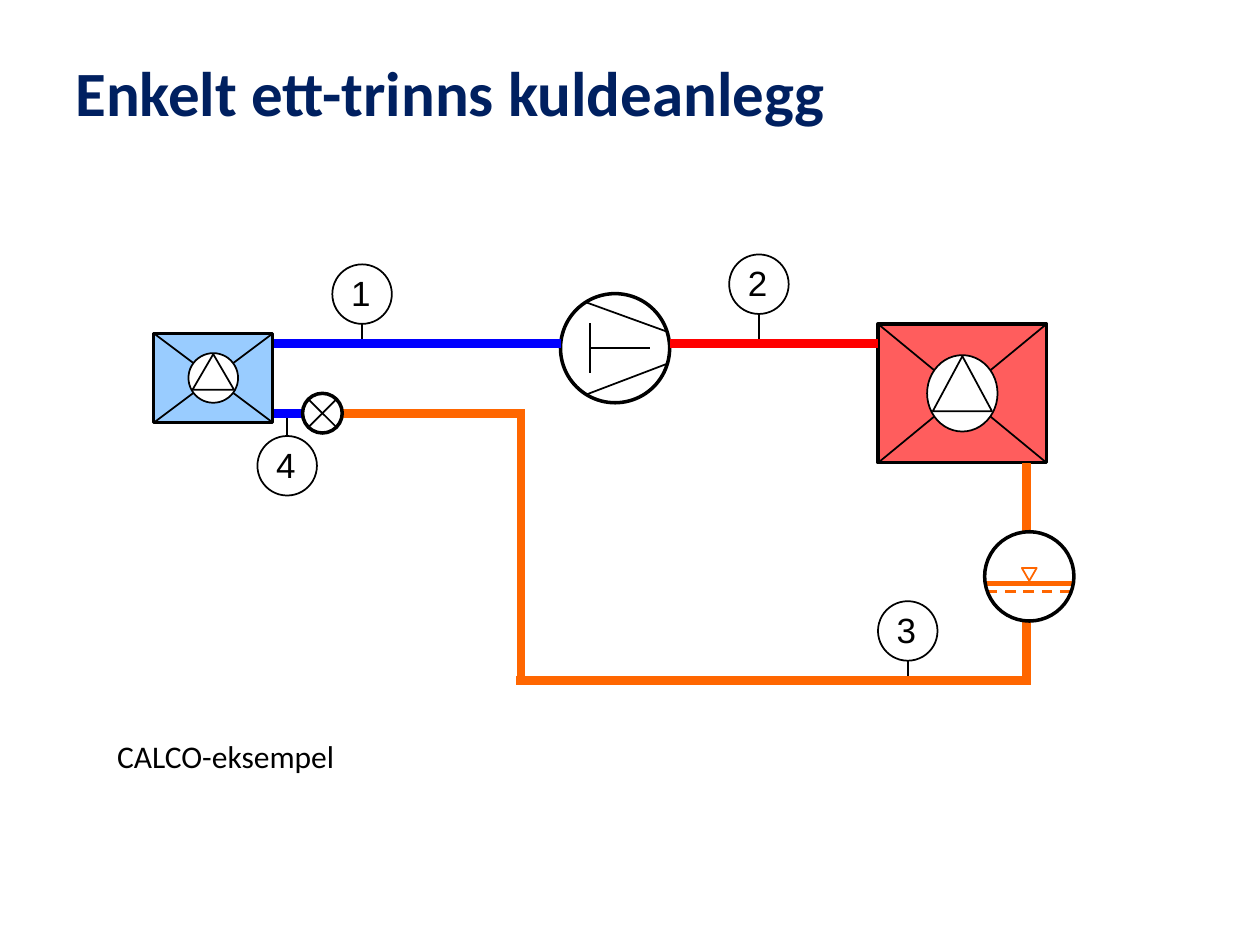
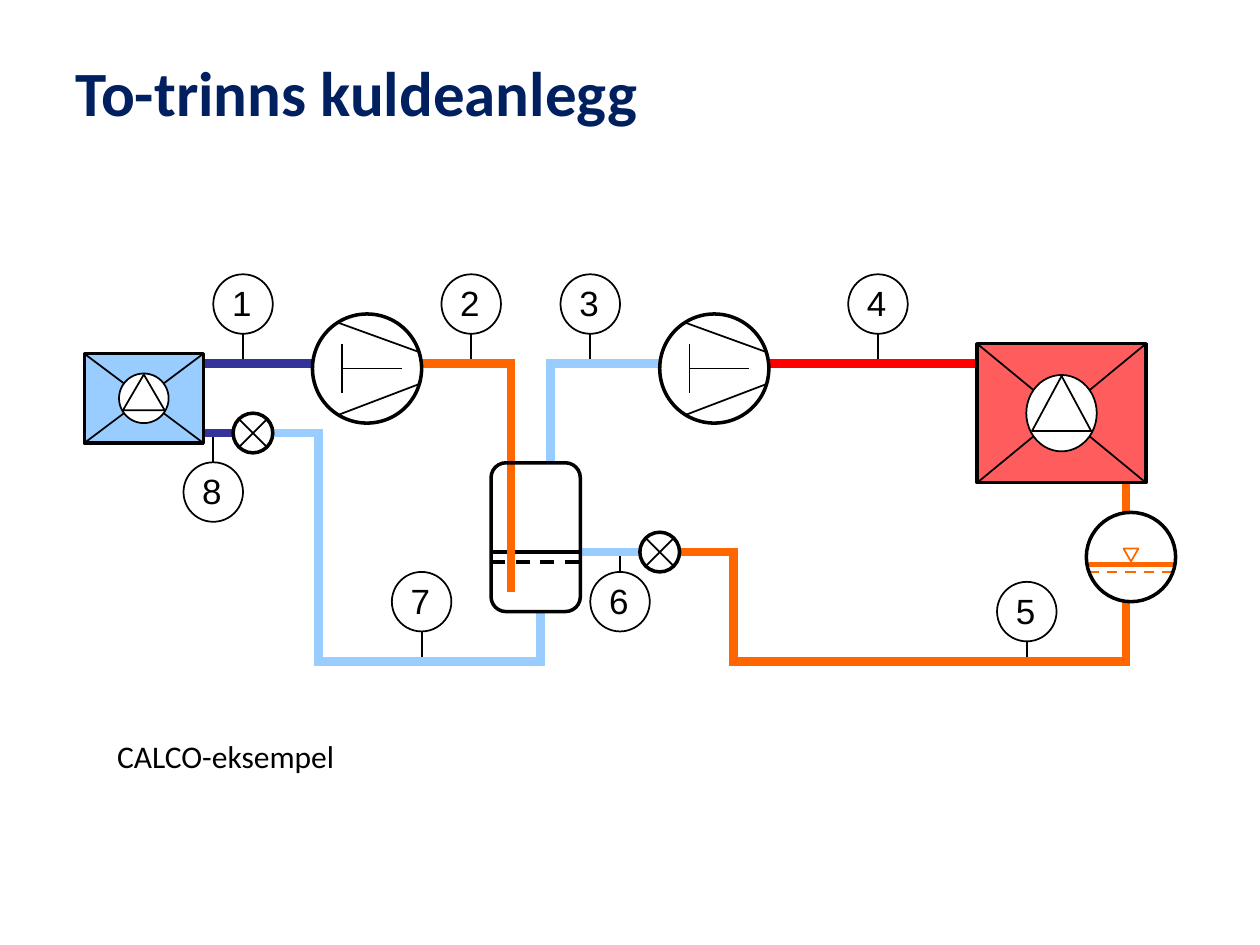
from dataclasses import dataclass
from itertools import pairwise

from lxml import etree
from pptx import Presentation
from pptx import util as u
from pptx.dml.color import RGBColor
from pptx.enum import dml, shapes, text
from pptx.oxml.ns import qn

SHAPE = shapes.MSO_SHAPE


@dataclass(frozen=True)
class Theme:
    # Colours
    title: str = "002060"
    ink: str = "000000"
    white: str = "FFFFFF"
    hot: str = "FF0000"
    warm: str = "FF6600"
    cool: str = "99CCFF"
    cold: str = "0000FF"
    deep: str = "333399"
    condenser: str = "FF5D5D"
    # Fonts and type sizes
    body_font: str = "Calibri"
    label_font: str = "Arial"
    title_size: int = 36
    label_size: int = 20
    note_size: int = 18
    # Line widths in points
    thin: float = 1
    dashed: float = 1.5
    bold: float = 2
    level: float = 3
    pipe: float = 5


def put_text(tf, content, *, font, size, color, bold=False, align=text.PP_ALIGN.LEFT,
             anchor=text.MSO_ANCHOR.TOP, wrap=True, margin=None):
    """Write one formatted paragraph into a text frame."""
    tf.word_wrap = wrap
    tf.vertical_anchor = anchor
    if margin is not None:
        tf.margin_left = tf.margin_right = tf.margin_top = tf.margin_bottom = u.Cm(margin)
    p = tf.paragraphs[0]
    p.alignment = align
    r = p.add_run()
    r.text = content
    r.font.name, r.font.size, r.font.bold = font, u.Pt(size), bold
    r.font.color.rgb = RGBColor.from_string(color)


class Plant:
    """Draws refrigeration diagrams; all lengths are centimetres."""

    def __init__(self, prs, theme):
        self.prs, self.t, self.s = prs, theme, None

    # Basic elements
    def new_slide(self, title, note):
        t = self.t
        self.s = self.prs.slides.add_slide(self.prs.slide_layouts[6])
        self.textbox(title, 1.27, 0.76, 22.86, 2.16, size=t.title_size, color=t.title,
                     bold=True, anchor=text.MSO_ANCHOR.MIDDLE)
        self.textbox(note, 2.11, 14.73, 5.2, 1.02, size=t.note_size, color=t.ink)

    def textbox(self, content, x, y, w, h, **fmt):
        sp = self.s.shapes.add_textbox(u.Cm(x), u.Cm(y), u.Cm(w), u.Cm(h))
        put_text(sp.text_frame, content, font=self.t.body_font, **fmt)

    def shape(self, kind, x, y, w, h, fill=None, color=None, width=None):
        sp = self.s.shapes.add_shape(kind, u.Cm(x), u.Cm(y), u.Cm(w), u.Cm(h))
        sp.shadow.inherit = False
        if fill:
            sp.fill.solid()
            sp.fill.fore_color.rgb = RGBColor.from_string(fill)
        else:
            sp.fill.background()
        sp.line.color.rgb = RGBColor.from_string(color or self.t.ink)
        sp.line.width = u.Pt(width or self.t.thin)
        return sp

    def line(self, x1, y1, x2, y2, color=None, width=None, dash=False):
        c = self.s.shapes.add_connector(shapes.MSO_CONNECTOR.STRAIGHT,
                                        u.Cm(x1), u.Cm(y1), u.Cm(x2), u.Cm(y2))
        c.line.color.rgb = RGBColor.from_string(color or self.t.ink)
        c.line.width = u.Pt(width or self.t.thin)
        if dash:
            c.line.dash_style = dml.MSO_LINE.DASH
        etree.SubElement(c._element.spPr, qn("a:effectLst"))

    def pipe(self, color, *points):
        """Straight runs through the points; each run but the last fills its corner."""
        half = u.Pt(self.t.pipe).cm / 2
        runs = list(pairwise(points))
        for i, ((x1, y1), (x2, y2)) in enumerate(runs):
            extra = half if i < len(runs) - 1 else 0
            dx, dy = (x2 > x1) - (x2 < x1), (y2 > y1) - (y2 < y1)
            self.line(x1, y1, x2 + dx * extra, y2 + dy * extra, color, self.t.pipe)

    # Plant components
    def exchanger(self, x, y, w, h, fan_w, fan_h, fill):
        t = self.t
        self.shape(SHAPE.RECTANGLE, x, y, w, h, fill, width=t.bold)
        self.line(x, y + h, x + w, y)
        self.line(x, y, x + w, y + h)
        fan_x, fan_y = x + (w - fan_w) / 2, y + (h - fan_h) / 2
        self.shape(SHAPE.OVAL, fan_x, fan_y, fan_w, fan_h, t.white)
        self.shape(SHAPE.FLOWCHART_EXTRACT, fan_x + 0.08 * fan_w, fan_y + 0.02,
                   0.84 * fan_w, 0.72 * fan_h, t.white)

    def evaporator(self, x, y):
        self.exchanger(x, y, 2.4, 1.8, 1, 1, self.t.cool)

    def condenser(self, x, y):
        self.exchanger(x, y, 3.4, 2.8, 1.42, 1.54, self.t.condenser)

    def compressor(self, x, y):
        self.shape(SHAPE.OVAL, x, y, 2.2, 2.2, self.t.white, width=self.t.bold)
        for x1, y1, x2, y2 in ((0.53, 2.03, 2.13, 1.42), (0.53, 0.18, 2.13, 0.76),
                               (0.6, 0.6, 0.6, 1.6), (0.6, 1.1, 1.8, 1.1)):
            self.line(x + x1, y + y1, x + x2, y + y2)

    def valve(self, x, y):
        self.shape(SHAPE.OVAL, x, y, 0.8, 0.8, width=self.t.bold)
        self.line(x + 0.1, y + 0.7, x + 0.7, y + 0.1)
        self.line(x + 0.7, y + 0.7, x + 0.1, y + 0.1)

    def receiver(self, x, y):
        t = self.t
        self.line(x, y + 1.05, x + 1.8, y + 1.05, t.warm, t.level)
        self.line(x + 0.04, y + 1.2, x + 1.84, y + 1.2, t.warm, t.dashed, dash=True)
        self.shape(SHAPE.FLOWCHART_MERGE, x + 0.75, y + 0.73, 0.3, 0.26, color=t.warm)
        self.shape(SHAPE.OVAL, x, y, 1.8, 1.8, width=t.bold)

    def separator_levels(self, x, y):
        for level, dash in ((1.8, False), (2, True)):
            self.line(x, y + level, x + 1.8, y + level, width=self.t.bold, dash=dash)

    def separator_shell(self, x, y):
        self.shape(SHAPE.ROUNDED_RECTANGLE, x, y, 1.8, 3, width=self.t.bold)

    def state_point(self, number, x, y, pipe_y):
        """Numbered circle with a stem to the pipe above or below it."""
        t, d = self.t, 1.2
        self.line(x + d / 2, y + d if pipe_y > y else y, x + d / 2, pipe_y)
        sp = self.shape(SHAPE.OVAL, x, y, d, d)
        put_text(sp.text_frame, str(number), font=t.label_font, size=t.label_size,
                 color=t.ink, align=text.PP_ALIGN.CENTER, anchor=text.MSO_ANCHOR.MIDDLE,
                 wrap=False, margin=0)
        sp.text_frame.margin_right = sp.text_frame.margin_bottom = u.Cm(0.05)

    def state_points(self, *points):
        for number, point in enumerate(points, 1):
            self.state_point(number, *point)


NOTE = "CALCO-eksempel"


def one_stage(d):
    t = d.t
    d.new_slide("Enkelt ett-trinns kuldeanlegg", NOTE)
    gas_y, feed_y, liquid_y = 6.93, 8.33, 13.72

    # State points, with stems that end behind the pipes
    d.state_points((6.7, 5.33, gas_y), (14.7, 5.13, gas_y),
                   (17.7, 12.12, liquid_y), (5.19, 8.79, feed_y))

    # Components behind the pipes
    d.compressor(11.3, 5.92)
    d.condenser(17.7, 6.53)

    # Pipes
    d.pipe(t.cold, (5.5, gas_y), (11.3, gas_y))
    d.pipe(t.hot, (13.5, gas_y), (17.7, gas_y))
    d.pipe(t.warm, (20.7, 9.33), (20.7, 10.72))
    d.pipe(t.warm, (20.7, 12.52), (20.7, liquid_y), (10.5, liquid_y),
           (10.5, feed_y), (6.9, feed_y))
    d.pipe(t.cold, (5.5, feed_y), (6.1, feed_y))

    # Components in front of the pipes
    d.evaporator(3.1, 6.72)
    d.receiver(19.85, 10.72)
    d.valve(6.1, 7.93)


def two_stage(d):
    t = d.t
    d.new_slide("To-trinns kuldeanlegg", NOTE)
    gas_y, feed_y, inlet_y, liquid_y = 7.33, 8.73, 11.13, 13.33
    separator = (9.9, 9.33)

    # State points, with stems that end behind the pipes
    top = [(x, 5.53, gas_y) for x in (4.3, 8.9, 11.3, 17.1)]
    d.state_points(*top, (20.1, 11.73, liquid_y), (11.9, 11.53, inlet_y),
                   (7.9, 11.53, liquid_y), (3.7, 9.32, feed_y))
    d.separator_levels(*separator)

    # Low-pressure pipes
    d.pipe(t.deep, (4.1, gas_y), (6.3, gas_y))
    d.pipe(t.deep, (4.1, feed_y), (4.7, feed_y))
    d.pipe(t.cool, (5.5, feed_y), (6.42, feed_y), (6.42, liquid_y),
           (10.9, liquid_y), (10.9, 12.32))

    # Intermediate-pressure pipes
    d.pipe(t.warm, (8.5, gas_y), (10.3, gas_y), (10.3, 11.94))
    d.pipe(t.cool, (11.1, 9.32), (11.1, gas_y), (13.3, gas_y))
    d.pipe(t.cool, (11.7, inlet_y), (12.9, inlet_y))

    # High-pressure pipes
    d.pipe(t.hot, (15.5, gas_y), (19.7, gas_y))
    d.pipe(t.warm, (22.7, 9.73), (22.7, 10.34))
    d.pipe(t.warm, (22.7, 12.14), (22.7, liquid_y), (14.78, liquid_y),
           (14.78, inlet_y), (13.7, inlet_y))

    # Components in front of the pipes
    d.evaporator(1.7, 7.13)
    for x in (6.3, 13.3):
        d.compressor(x, 6.33)
    d.condenser(19.7, 6.93)
    d.receiver(21.9, 10.33)
    d.valve(4.7, 8.33)
    d.valve(12.9, 10.73)
    d.separator_shell(*separator)


def main():
    prs = Presentation()
    prs.slide_width, prs.slide_height = u.Cm(25.4), u.Cm(19.05)
    plant = Plant(prs, Theme())
    one_stage(plant)
    two_stage(plant)
    prs.save("out.pptx")


if __name__ == "__main__":
    main()
